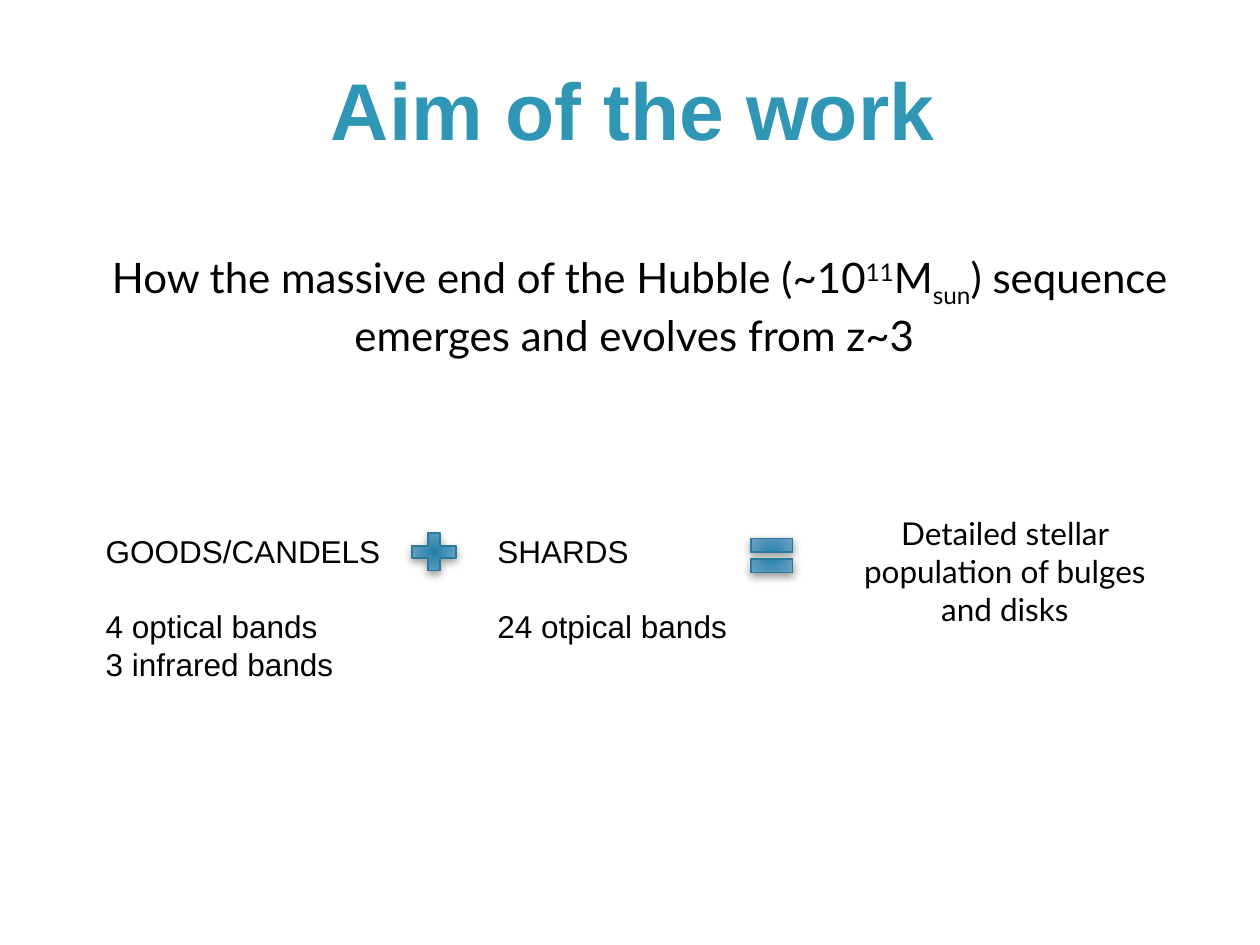
from lxml import etree
from pptx import Presentation
from pptx.dml.color import RGBColor
from pptx.enum.shapes import MSO_SHAPE as Shape
from pptx.enum.text import MSO_ANCHOR as Anchor, PP_ALIGN as Align
from pptx.oxml import parse_xml
from pptx.oxml.ns import qn
from pptx.util import Pt

BLACK = RGBColor(0x00, 0x00, 0x00)
TITLE_BLUE = RGBColor(0x2F, 0x97, 0xB5)
OUTLINE_BLUE = RGBColor(0x28, 0x7A, 0x9E)
GRADIENT = [(0, "2180AA"), (69, "75A5C5"), (100, "B8CCDC")]
NAMESPACE = 'xmlns:a="http://schemas.openxmlformats.org/drawingml/2006/main"'

presentation = Presentation()
presentation.slide_width, presentation.slide_height = Pt(720), Pt(540)
slide = presentation.slides.add_slide(presentation.slide_layouts[6])


def add_text(box, paragraphs, font, size, align, color=BLACK, bold=False):
    """Each paragraph is a list of (text, baseline shift in percent) runs."""
    frame = slide.shapes.add_textbox(*map(Pt, box)).text_frame
    frame.word_wrap = True
    for index, runs in enumerate(paragraphs):
        paragraph = frame.add_paragraph() if index else frame.paragraphs[0]
        paragraph.alignment = align
        for text, baseline in runs:
            run = paragraph.add_run()
            run.text = text
            run.font.name = font
            run.font.size = Pt(size)
            run.font.bold = bold
            run.font.color.rgb = color
            if baseline:
                run.font._element.set("baseline", str(baseline * 1000))
    return frame


# Title
title = add_text((37.5, 3, 648, 90), [[("Aim of the work", 0)]],
                 "Arial", 46, Align.CENTER, TITLE_BLUE, True)
title.vertical_anchor = Anchor.BOTTOM

# Research question
question = [("How the massive end of the Hubble (~10", 0), ("11", 30), ("M", 0),
            ("sun", -25), (") sequence emerges and evolves from z~3 ", 0)]
add_text((44, 140.4, 643, 65.5), [question], "Lato", 24, Align.CENTER)

# Surveys: name, then its bands after a one-line gap
surveys = [
    (53.3, 178, 116.6, ["GOODS/CANDELS", "4 optical bands", "3 infrared bands"]),
    (277.2, 169, 72.7, ["SHARDS", "24 otpical bands"]),
]
for left, width, height, lines in surveys:
    frame = add_text((left, 300.2, width, height), [[(line, 0)] for line in lines],
                     "Arial", 18, Align.LEFT)
    frame.paragraphs[1].space_before = Pt(21.6)

# Result
add_text((471.6, 290.2, 205.2, 72.7),
         [[("Detailed stellar population of bulges and disks", 0)]],
         "Lato", 18, Align.CENTER)

# Plus and equal signs with radial gradient and soft shadow
stops = "".join(f'<a:gs pos="{position * 1000}"><a:srgbClr val="{color}"/></a:gs>'
                for position, color in GRADIENT)
gradient_xml = (f'<a:gradFill {NAMESPACE} rotWithShape="1"><a:gsLst>{stops}</a:gsLst>'
                '<a:path path="circle"><a:fillToRect l="100000" t="100000" '
                'r="100000" b="100000"/></a:path></a:gradFill>')
shadow_xml = (f'<a:effectLst {NAMESPACE}><a:outerShdw blurRad="{Pt(5)}" dist="{Pt(2)}" '
              'dir="5400000" rotWithShape="0"><a:srgbClr val="000000">'
              '<a:alpha val="40000"/></a:srgbClr></a:outerShdw></a:effectLst>')
signs = [
    (Shape.MATH_EQUAL, (424.8, 301, 32.4, 33)),
    (Shape.MATH_PLUS, (231.1, 301, 33.8, 28.8)),
]
for kind, box in signs:
    sign = slide.shapes.add_shape(kind, *map(Pt, box))
    sign.line.color.rgb = OUTLINE_BLUE
    sign.line.width = Pt(1)
    sign.shadow.inherit = False
    sign.fill.gradient()
    properties = sign._element.spPr
    for tag, xml in (("a:gradFill", gradient_xml), ("a:effectLst", shadow_xml)):
        properties.replace(properties.find(qn(tag)), parse_xml(xml))

presentation.save("out.pptx")
